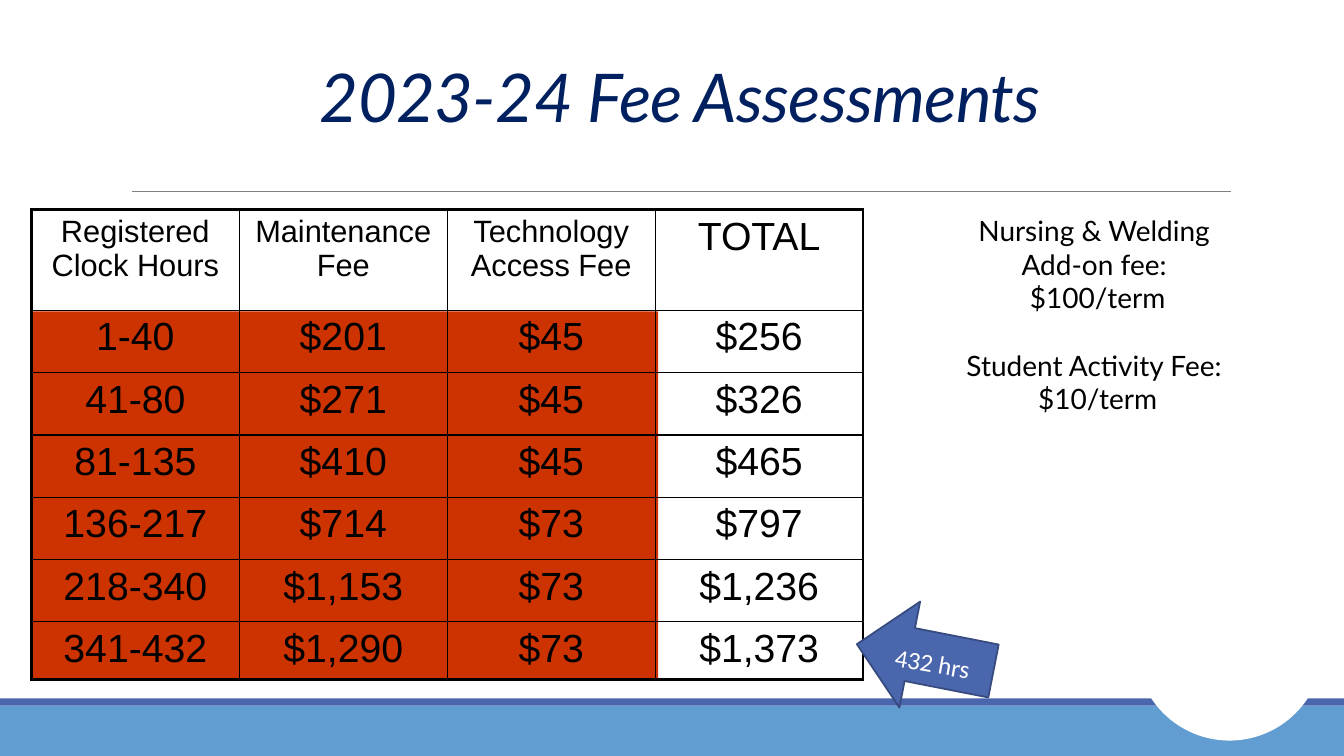
from lxml.etree import SubElement
from pptx import Presentation
from pptx.dml.color import RGBColor
from pptx.enum.shapes import MSO_CONNECTOR, MSO_SHAPE
from pptx.enum.text import MSO_ANCHOR, PP_ALIGN
from pptx.oxml.ns import qn
from pptx.util import Cm, Pt

TITLE = "2023-24 Fee Assessments"
FEES = [
    ("Registered Clock Hours", "Maintenance Fee", "Technology Access Fee", "TOTAL"),
    ("1-40", "$201", "$45", "$256"),
    ("41-80", "$271", "$45", "$326"),
    ("81-135", "$410", "$45", "$465"),
    ("136-217", "$714", "$73", "$797"),
    ("218-340", "$1,153", "$73", "$1,236"),
    ("341-432", "$1,290", "$73", "$1,373"),
]
NOTES = ["Nursing & Welding ", "Add-on fee: ", "$100/term", "Student Activity Fee: ", "$10/term"]
GAP = 3
HOURS = "432 hrs"


class Theme:
    white = RGBColor.from_string("FFFFFF")
    black = RGBColor.from_string("000000")
    navy = RGBColor.from_string("002060")
    blue = RGBColor.from_string("4A66AC")
    edge = RGBColor.from_string("374B7F")
    sky = RGBColor.from_string("629DD1")
    red = RGBColor.from_string("CC3300")
    gray = RGBColor.from_string("808080")
    head, big, small, note, tag = Pt(48), Pt(28), Pt(22), Pt(20), Pt(18)
    thin, thick, rim, hair = Pt(1), Pt(2.25), Pt(1.25), Pt(0.5)
    sans, grid, label = "Lato", "Arial", "Calibri"


def style(part, face, size, color):
    part.alignment = PP_ALIGN.CENTER
    for run in part.runs:
        run.font.name, run.font.size = face, size
        run.font.color.rgb = color


def draw(shapes, kind, box, fill, line=None):
    shape = shapes.add_shape(kind, *map(Cm, box))
    shape.shadow.inherit = False
    shape.fill.solid()
    shape.fill.fore_color.rgb = fill
    if line is None:
        shape.line.fill.background()
    else:
        shape.line.color.rgb = line
        shape.line.width = Theme.rim
    return shape


def border(cell, sides):
    props = cell._tc.get_or_add_tcPr()
    for side, width in sides.items():
        line = SubElement(props, qn("a:ln" + side), w=str(int(width)))
        fill = SubElement(line, qn("a:solidFill"))
        SubElement(fill, qn("a:srgbClr"), val=str(Theme.black))


def frame(slide):
    shapes = slide.shapes
    draw(shapes, MSO_SHAPE.RECTANGLE, (0, 17.78, 33.87, 1.27), Theme.sky)
    draw(shapes, MSO_SHAPE.RECTANGLE, (0, 17.6, 33.87, 0.18), Theme.blue)
    rule = shapes.add_connector(MSO_CONNECTOR.STRAIGHT, Cm(3.33), Cm(4.83), Cm(31.01), Cm(4.83))
    rule.line.color.rgb = Theme.gray
    rule.line.width = Theme.hair
    SubElement(rule._element.spPr, qn("a:effectLst"))
    draw(shapes, MSO_SHAPE.OVAL, (28.65, 13.97, 4.67, 4.67), Theme.white, Theme.white)


def title(slide):
    shape = slide.shapes.title
    shape.left, shape.top, shape.width, shape.height = map(Cm, (3.18, 1.22, 27.94, 2.72))
    text = shape.text_frame
    text.text = TITLE
    text.vertical_anchor = MSO_ANCHOR.MIDDLE
    part = text.paragraphs[0]
    part.line_spacing = 0.85
    style(part, Theme.sans, Theme.head, Theme.navy)
    font = part.runs[0].font
    font.italic = True
    font._element.set("spc", "-50")


def fees(slide):
    left, top, wide = 0.79, 5.28, 5.24
    highs = [2.54] + [1.57] * 5 + [1.45]
    draw(slide.shapes, MSO_SHAPE.RECTANGLE, (left, 7.85, 15.8, 9.27), Theme.red)
    rows, cols = len(FEES), len(FEES[0])
    box = map(Cm, (left, top, wide * cols, sum(highs)))
    table = slide.shapes.add_table(rows, cols, *box).table
    table.first_row = table.horz_banding = False
    for col in table.columns:
        col.width = Cm(wide)
    for r, (row, high) in enumerate(zip(FEES, highs)):
        table.rows[r].height = Cm(high)
        for c, word in enumerate(row):
            cell = table.cell(r, c)
            outer = {"L": c == 0, "R": c == cols - 1, "T": r == 0, "B": r == rows - 1}
            border(cell, {k: Theme.thick if out else Theme.thin for k, out in outer.items()})
            cell.fill.background()
            cell.text_frame.text = word
            size = Theme.small if r == 0 and c < cols - 1 else Theme.big
            style(cell.text_frame.paragraphs[0], Theme.grid, size, Theme.black)


def notes(slide):
    text = slide.shapes.add_textbox(*map(Cm, (22.23, 5.26, 10.87, 6.68))).text_frame
    text.word_wrap = True
    text.text = "\n".join(NOTES)
    for part in text.paragraphs:
        style(part, Theme.sans, Theme.note, Theme.black)
    text.paragraphs[GAP].space_before = Pt(24)


def pointer(slide):
    group = slide.shapes.add_group_shape().shapes
    arrow = draw(group, MSO_SHAPE.RIGHT_ARROW, (21.56, 15.21, 3.51, 2.72), Theme.blue, Theme.edge)
    arrow.rotation = 191.1
    label = group.add_textbox(*map(Cm, (21.79, 16.2, 3.43, 1.02)))
    label.rotation = 9.9
    label.text_frame.word_wrap = True
    label.text_frame.text = HOURS
    style(label.text_frame.paragraphs[0], Theme.label, Theme.tag, Theme.white)


def main():
    deck = Presentation()
    deck.slide_width, deck.slide_height = Cm(33.87), Cm(19.05)
    slide = deck.slides.add_slide(deck.slide_layouts[5])
    for build in (frame, title, fees, notes, pointer):
        build(slide)
    deck.save("out.pptx")


if __name__ == "__main__":
    main()
